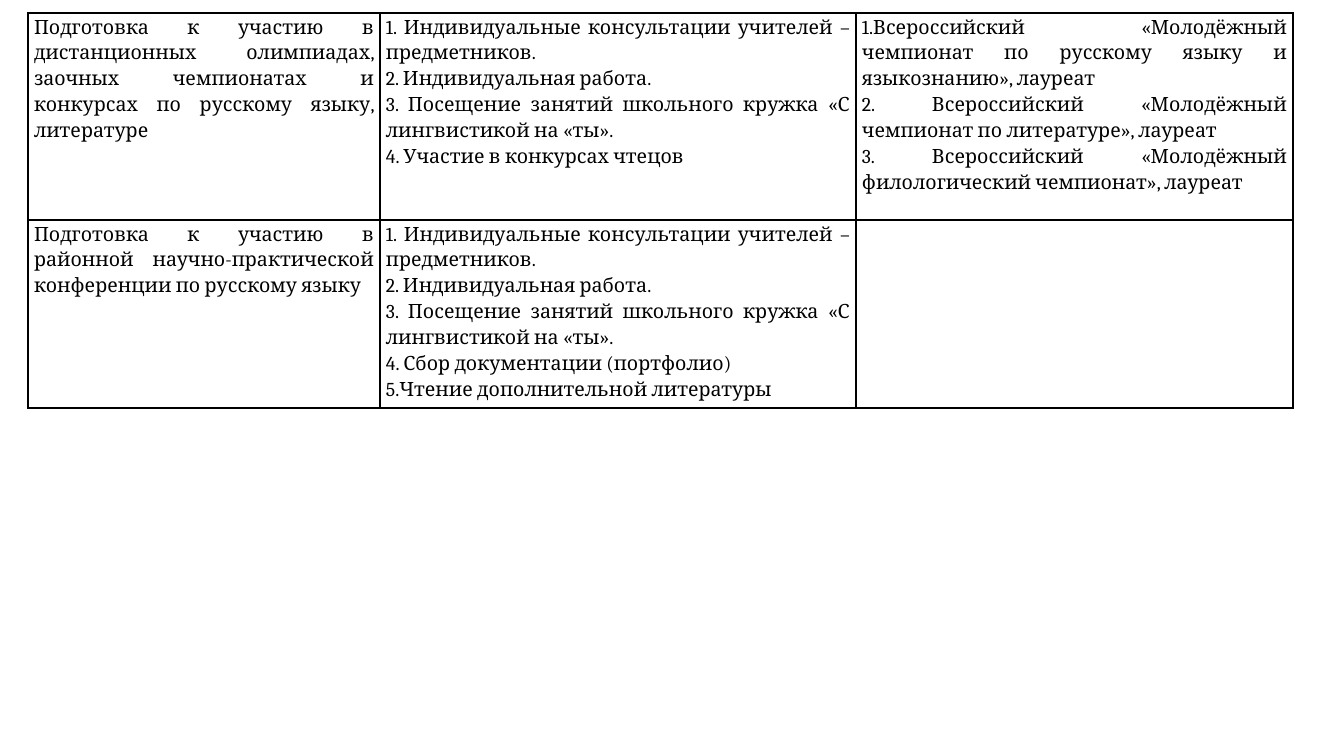
import pptx
import pptx.dml.color
import pptx.enum.text
import pptx.oxml
import pptx.oxml.ns
import pptx.util

PX = 914400 / 100.8
BLACK = pptx.dml.color.RGBColor(0, 0, 0)
COLUMN_WIDTHS = [352, 476, 437]
ROW_HEIGHTS = [207, 188]
SIDE_INSET = 6

COMMON_STEPS = [
    "1. Индивидуальные консультации учителей – предметников.",
    "2. Индивидуальная работа.",
    "3. Посещение занятий школьного кружка «С лингвистикой на «ты».",
]
ROWS = [
    [
        ["Подготовка к участию в дистанционных олимпиадах, заочных чемпионатах и конкурсах по русскому языку, литературе"],
        COMMON_STEPS + ["4. Участие в конкурсах чтецов"],
        [
            "1.Всероссийский «Молодёжный чемпионат по русскому языку и языкознанию», лауреат",
            "2. Всероссийский «Молодёжный чемпионат по литературе», лауреат",
            "3. Всероссийский «Молодёжный филологический чемпионат», лауреат",
        ],
    ],
    [
        ["Подготовка к участию в районной научно-практической конференции по русскому языку"],
        COMMON_STEPS + ["4. Сбор документации (портфолио)", "5.Чтение дополнительной литературы"],
        [],
    ],
]


def px(length):
    return pptx.util.Emu(round(length * PX))


def add_borders(cell):
    properties = cell._tc.get_or_add_tcPr()
    for position, side in enumerate(["lnL", "lnR", "lnT", "lnB"]):
        border = pptx.oxml.parse_xml(
            f'<a:{side} {pptx.oxml.ns.nsdecls("a")} w="12700">'
            f'<a:solidFill><a:srgbClr val="{BLACK}"/></a:solidFill></a:{side}>'
        )
        properties.insert(position, border)


deck = pptx.Presentation()
deck.slide_width = px(1344)
deck.slide_height = px(756)
page = deck.slides.add_slide(deck.slide_layouts[6])

frame = page.shapes.add_table(
    len(ROWS), len(COLUMN_WIDTHS), px(28), px(13), px(sum(COLUMN_WIDTHS)), px(sum(ROW_HEIGHTS))
)
table = frame.table
table.first_row = False
table.horz_banding = False
for column, width in zip(table.columns, COLUMN_WIDTHS):
    column.width = px(width)
for row, height in zip(table.rows, ROW_HEIGHTS):
    row.height = px(height)

for row, contents in zip(table.rows, ROWS):
    for cell, lines in zip(row.cells, contents):
        cell.fill.background()
        cell.margin_left = cell.margin_right = px(SIDE_INSET)
        cell.margin_top = cell.margin_bottom = 0
        add_borders(cell)
        cell.text_frame.text = "\n".join(lines)
        for para in cell.text_frame.paragraphs:
            para.alignment = pptx.enum.text.PP_ALIGN.JUSTIFY
            para.line_spacing = 1.15
            for span in para.runs:
                span.font.name = "Cambria"
                span.font.size = pptx.util.Pt(14)
                span.font.color.rgb = BLACK

deck.save("out.pptx")
